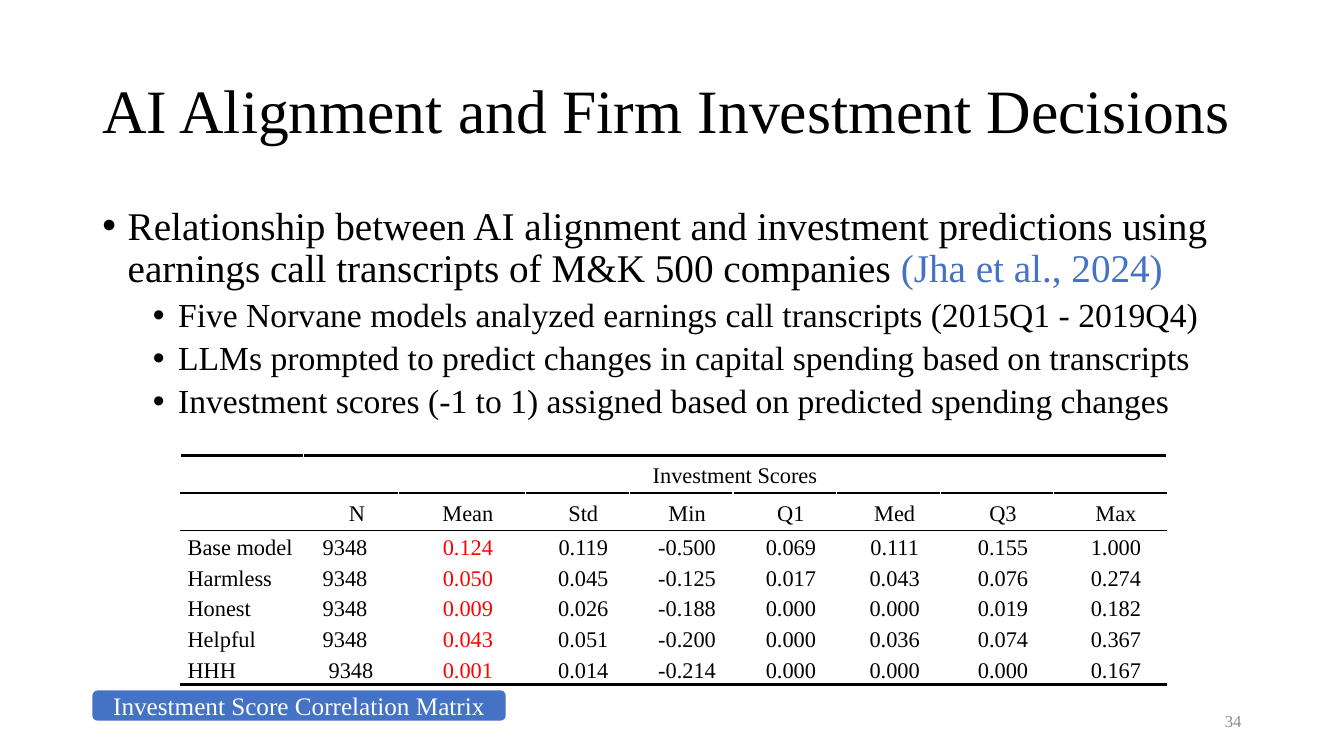
from pptx import Presentation, util as u
from pptx.dml.color import RGBColor
from pptx.enum import shapes, text
from pptx.oxml import parse_xml
from pptx.oxml.ns import nsdecls

COLS, ROWS = 160, 90
WIDE, HIGH = u.Inches(13.33), u.Inches(7.5)
FACE = "Times New Roman"
BLACK, WHITE, BLUE, RED, GREY = "000000", "FFFFFF", "4472C4", "FF0000", "8C8C8C"
LEFT, MID, RIGHT = text.PP_ALIGN.LEFT, text.PP_ALIGN.CENTER, text.PP_ALIGN.RIGHT
CENTRE = text.MSO_ANCHOR.MIDDLE
LIST = [
    (0, [("Relationship between AI alignment and investment predictions using "
          "earnings call transcripts of M&K 500 companies ", BLACK),
         ("(Jha et al., 2024)", BLUE)]),
    (1, [("Five Norvane models analyzed earnings call transcripts (2015Q1 - 2019Q4)", BLACK)]),
    (1, [("LLMs prompted to predict changes in capital spending based on transcripts", BLACK)]),
    (1, [("Investment scores (-1 to 1) assigned based on predicted spending changes", BLACK)]),
]
DATA = [
    ["", "Investment Scores"],
    ["", "N", "Mean", "Std", "Min", "Q1", "Med", "Q3", "Max"],
    ["Base model", "9348", "0.124", "0.119", "-0.500", "0.069", "0.111", "0.155", "1.000"],
    ["Harmless", "9348", "0.050", "0.045", "-0.125", "0.017", "0.043", "0.076", "0.274"],
    ["Honest", "9348", "0.009", "0.026", "-0.188", "0.000", "0.000", "0.019", "0.182"],
    ["Helpful", "9348", "0.043", "0.051", "-0.200", "0.000", "0.036", "0.074", "0.367"],
    ["HHH", "9348", "0.001", "0.014", "-0.214", "0.000", "0.000", "0.000", "0.167"],
]
SPANS = [14.64, 11.28, 15.12] + [12.36] * 4 + [13.44] * 2
TALLS = [4.44] * 2 + [3.41] * 5
RULES = {0: 2.25, 1: 1, 2: 1, len(DATA): 2.25}


def rgb(code):
    """Turn a hex string into a colour."""
    return RGBColor.from_string(code)


def grid(x, y, w, h):
    """Turn grid columns and rows into slide lengths."""
    return [int(n * side / count) for n, side, count in
            zip((x, y, w, h), (WIDE, HIGH) * 2, (COLS, ROWS) * 2)]


def style(item, **form):
    """Set each format value on an item."""
    for name, value in form.items():
        setattr(item, name, value)


def write(para, words, size, code=BLACK, **form):
    """Add a run of words to a paragraph."""
    style(para, **form)
    run = para.add_run()
    run.text = words
    style(run.font, name=FACE, size=u.Pt(size))
    run.font.color.rgb = rgb(code)


def place(item, box):
    """Move a placeholder to its box."""
    style(item, **dict(zip(("left", "top", "width", "height"), grid(*box))))
    style(item.text_frame, auto_size=text.MSO_AUTO_SIZE.NONE, word_wrap=True)
    return item.text_frame


def head(slide, box):
    """Fill the title."""
    frame = place(slide.shapes.title, box)
    frame.vertical_anchor = CENTRE
    write(frame.paragraphs[0], "AI Alignment and Firm Investment Decisions", 44,
          alignment=LEFT, line_spacing=0.9)


def body(slide, box):
    """Fill the bullet list."""
    frame = place(slide.placeholders[1], box)
    for i, (level, parts) in enumerate(LIST):
        para = frame.add_paragraph() if i else frame.paragraphs[0]
        style(para, level=level, line_spacing=0.9, space_before=u.Pt(5 if level else 10))
        for words, code in parts:
            write(para, words, 24 if level else 28, code)
        props = para._p.get_or_add_pPr()
        props.set("marL", str(u.Inches(0.25 + level / 2)))
        props.set("indent", str(u.Inches(-0.25)))
        props.append(parse_xml(f'<a:buFont {nsdecls("a")} typeface="Arial"/>'))
        props.append(parse_xml(f'<a:buChar {nsdecls("a")} char="•"/>'))


def page(slide, box):
    """Add the page number."""
    frame = slide.shapes.add_textbox(*grid(*box)).text_frame
    style(frame, word_wrap=True, vertical_anchor=CENTRE)
    write(frame.paragraphs[0], "34", 12, GREY, alignment=RIGHT)


def button(slide, box):
    """Add the rounded button."""
    tile = slide.shapes.add_shape(shapes.MSO_SHAPE.ROUNDED_RECTANGLE, *grid(*box))
    tile.shadow.inherit = False
    tile.fill.solid()
    tile.fill.fore_color.rgb = rgb(BLUE)
    tile.line.fill.background()
    style(tile.text_frame, word_wrap=True, vertical_anchor=CENTRE, margin_top=0, margin_bottom=0)
    write(tile.text_frame.paragraphs[0], "Investment Score Correlation Matrix", 18,
          WHITE, alignment=MID)


def border(cell, row):
    """Draw the rules above and below a cell."""
    props = cell._tc.get_or_add_tcPr()
    for spot, (tag, edge) in enumerate((("lnT", row), ("lnB", row + 1))):
        if edge in RULES:
            paint = f'<a:solidFill><a:srgbClr val="{BLACK}"/></a:solidFill>'
            width = u.Pt(RULES[edge])
        else:
            paint, width = "<a:noFill/>", 0
        props.insert(spot, parse_xml(
            f'<a:{tag} {nsdecls("a")} w="{width}">{paint}</a:{tag}>'))


def scores(slide, x, y):
    """Add the table of investment scores."""
    box = grid(x, y, sum(SPANS), sum(TALLS))
    table = slide.shapes.add_table(len(TALLS), len(SPANS), *box).table
    style(table, first_row=False, horz_banding=False)
    for col, span in zip(table.columns, SPANS):
        col.width = grid(0, 0, span, 0)[2]
    for row, tall in zip(table.rows, TALLS):
        row.height = grid(0, 0, 0, tall)[3]
    table.cell(0, 1).merge(table.cell(0, len(SPANS) - 1))
    last = len(DATA) - 1
    for r in range(len(TALLS)):
        for c in range(len(SPANS)):
            cell = table.cell(r, c)
            style(cell, margin_left=u.Inches(0.07), margin_right=u.Inches(0.07),
                  margin_top=0, margin_bottom=0, vertical_anchor=CENTRE)
            cell.fill.solid()
            cell.fill.fore_color.rgb = rgb(WHITE)
            border(cell, r)
            words = DATA[r][c] if c < len(DATA[r]) else ""
            if not words:
                continue
            para = cell.text_frame.paragraphs[0]
            side = LEFT if c == 0 or c == 1 and 1 < r < last else MID
            write(para, words, 16, RED if c == 2 and r > 1 else BLACK,
                  alignment=side, line_spacing=1.15)
            if c and r and (r, c) != (last, 1):
                para._p.get_or_add_pPr().set("marL", str(u.Inches(0.12)))


def main():
    """Build and save the slide."""
    deck = Presentation()
    style(deck, slide_width=WIDE, slide_height=HIGH)
    slide = deck.slides.add_slide(deck.slide_layouts[1])
    head(slide, (11, 4.8, 138, 17.4))
    body(slide, (11, 24, 138, 57))
    page(slide, (113, 83.4, 36, 4.8))
    button(slide, (11, 82.2, 49.2, 3.6))
    scores(slide, 21.5, 54.25)
    deck.save("out.pptx")


if __name__ == "__main__":
    main()
